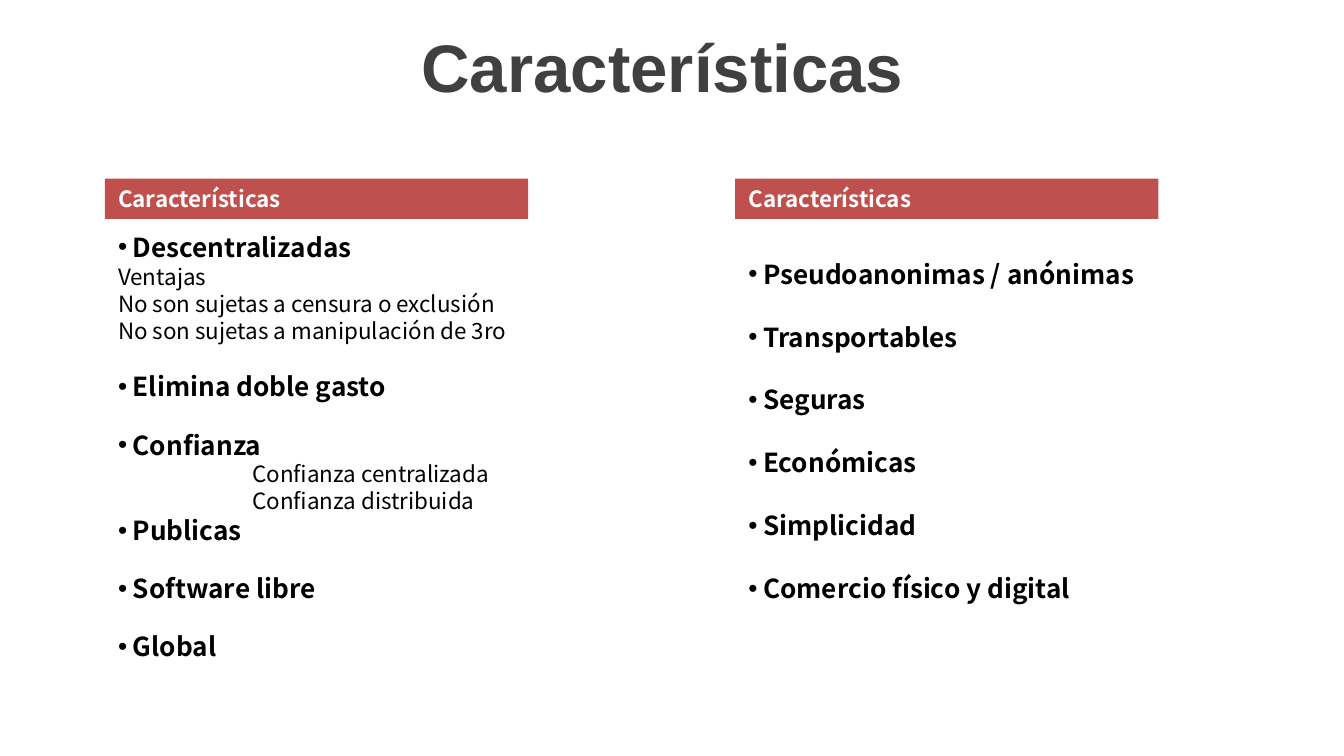
from pptx import Presentation
from pptx.dml.color import RGBColor as RGB
from pptx.enum.shapes import MSO_SHAPE as SHAPE
from pptx.enum.text import MSO_ANCHOR as ANCHOR, PP_ALIGN as ALIGN
from pptx.oxml.ns import qn
from pptx.util import Inches, Pt
from lxml import etree

COLORS = {"title": "404040", "bar": "C0504D", "white": "FFFFFF", "body": "000000"}
BODY_FONT = "Noto Sans CJK KR"
COLUMN_WIDTH = 3.15

LEFT_ITEMS = [
    ("Descentralizadas", "bullet", 0),
    ("Ventajas", "detail", 0.5),
    ("No son sujetas a censura o exclusión", "detail", 0),
    ("No son sujetas a manipulación de 3ro", "detail", 0),
    ("Elimina doble gasto", "bullet", 14.4),
    ("Confianza", "bullet", 14.4),
    ("Confianza centralizada", "indented", 0),
    ("Confianza distribuida", "indented", 0),
    ("Publicas", "bullet", 0),
    ("Software libre", "bullet", 14.4),
    ("Global", "bullet", 14.4),
]
RIGHT_TOPICS = [
    "Pseudoanonimas / anónimas",
    "Transportables",
    "Seguras",
    "Económicas",
    "Simplicidad",
    "Comercio físico y digital",
]
RIGHT_ITEMS = [(t, "bullet", 16.9 if i else 0) for i, t in enumerate(RIGHT_TOPICS)]


class SlideBuilder:
    def __init__(self, prs):
        self.s = prs.slides.add_slide(prs.slide_layouts[6])

    def run(self, p, text, size, color, bold=True, font=BODY_FONT):
        r = p.add_run()
        r.text = text
        r.font.name = font
        r.font.size = Pt(size)
        r.font.bold = bold
        r.font.color.rgb = RGB.from_string(COLORS[color])
        for tag in ("a:ea", "a:cs"):
            etree.SubElement(r.font._element, qn(tag)).set("typeface", font)

    def title(self, text):
        sp = self.s.shapes.add_textbox(0, 0, Inches(10), Inches(0.97))
        tf = sp.text_frame
        tf.word_wrap = True
        tf.vertical_anchor = ANCHOR.MIDDLE
        tf.margin_right = Inches(0.24)
        p = tf.paragraphs[0]
        p.alignment = ALIGN.CENTER
        self.run(p, text, 36, "title", font="Arial")

    def bar(self, left, text):
        sp = self.s.shapes.add_shape(
            SHAPE.RECTANGLE, Inches(left), Inches(1.33), Inches(COLUMN_WIDTH), Inches(0.3)
        )
        sp.shadow.inherit = False
        sp.fill.solid()
        sp.fill.fore_color.rgb = RGB.from_string(COLORS["bar"])
        sp.line.fill.background()
        tf = sp.text_frame
        tf.word_wrap = True
        tf.vertical_anchor = ANCHOR.TOP
        p = tf.paragraphs[0]
        p.alignment = ALIGN.LEFT
        self.run(p, text, 12, "white")

    def items(self, left, height, rows, top_margin=0.05):
        sp = self.s.shapes.add_textbox(
            Inches(left), Inches(1.67), Inches(COLUMN_WIDTH), Inches(height)
        )
        tf = sp.text_frame
        tf.word_wrap = True
        tf.margin_top = Inches(top_margin)
        for i, (text, kind, gap) in enumerate(rows):
            p = tf.add_paragraph() if i else tf.paragraphs[0]
            is_bullet = kind == "bullet"
            if is_bullet:
                self.bullet(p)
            elif kind == "indented":
                p._p.get_or_add_pPr().set("marL", str(Inches(1)))
            p.space_before = Pt(gap)
            self.run(p, text, 14 if is_bullet else 12, "body", bold=is_bullet)

    def bullet(self, p):
        pPr = p._p.get_or_add_pPr()
        pPr.set("marL", str(Inches(0.11)))
        pPr.set("indent", str(Inches(-0.11)))
        etree.SubElement(pPr, qn("a:buFont")).set("typeface", "Arial")
        etree.SubElement(pPr, qn("a:buChar")).set("char", "•")


def main():
    prs = Presentation()
    prs.slide_width = Inches(10)
    prs.slide_height = prs.slide_width * 9 // 16
    slide = SlideBuilder(prs)
    slide.title("Características")
    slide.items(0.78, 3.53, LEFT_ITEMS)
    slide.bar(0.78, "Características")
    slide.items(5.47, 3.1, RIGHT_ITEMS, top_margin=0.25)
    slide.bar(5.47, "Características")
    prs.save("out.pptx")


if __name__ == "__main__":
    main()
